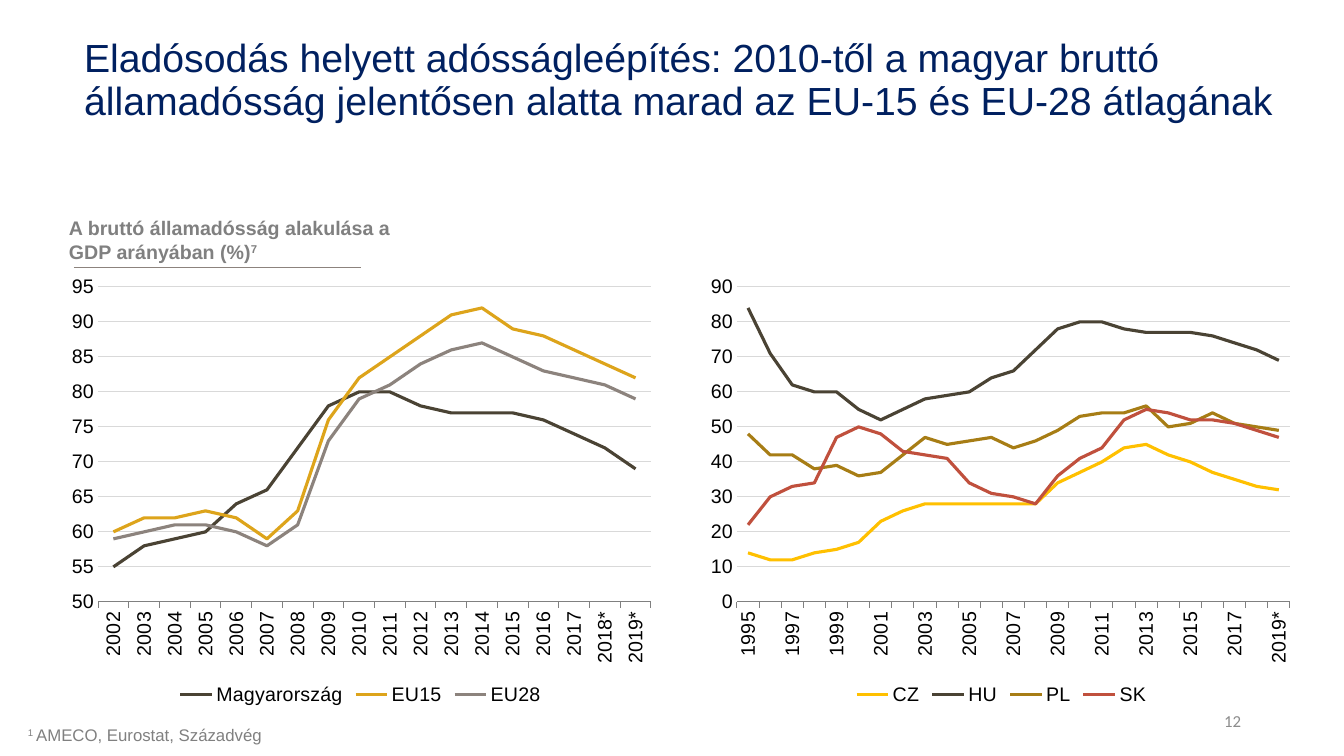
import lxml.etree
import pptx
import pptx.chart.data
import pptx.dml.color
import pptx.enum.chart
import pptx.enum.shapes
import pptx.enum.text
import pptx.oxml
import pptx.oxml.ns
import pptx.util

RGBColor = pptx.dml.color.RGBColor
Anchor = pptx.enum.text.MSO_ANCHOR
Align = pptx.enum.text.PP_ALIGN
qn = pptx.oxml.ns.qn

NAVY = RGBColor(0x00, 0x20, 0x60)
GREY = RGBColor(0x80, 0x80, 0x80)
PAGE_GREY = RGBColor(0x8C, 0x8C, 0x8C)
GRID_GREY = RGBColor(0xD9, 0xD9, 0xD9)
BLACK = RGBColor(0x00, 0x00, 0x00)
TAUPE = RGBColor(0x8C, 0x83, 0x7D)
DARK = RGBColor(0x4A, 0x43, 0x34)
AMBER = RGBColor(0xDD, 0xA4, 0x1B)
YELLOW = RGBColor(0xFF, 0xC0, 0x00)
OCHRE = RGBColor(0xA7, 0x7D, 0x15)
RED = RGBColor(0xC0, 0x50, 0x3D)

EMU_PER_PX = 914400 / 100.8
CHART_WIDTH, CHART_HEIGHT = 603, 443
PLOT_TOP, PLOT_WIDTH, PLOT_HEIGHT = 20, 553, 315


def px(length):
    return pptx.util.Emu(round(length * EMU_PER_PX))


def add_run(paragraph, text, size, color, name="Arial", bold=False, superscript=False):
    run = paragraph.add_run()
    run.text = text
    font = run.font
    font.name, font.size, font.bold = name, pptx.util.Pt(size), bold
    font.color.rgb = color
    if superscript:
        run._r.get_or_add_rPr().set("baseline", "30000")


def add_text_box(slide, left, top, width, height, anchor=Anchor.TOP):
    box = slide.shapes.add_textbox(px(left), px(top), px(width), px(height))
    box.text_frame.word_wrap = True
    box.text_frame.vertical_anchor = anchor
    return box.text_frame


def place_title(slide, left, top, width, height):
    title = slide.shapes.title
    title.left, title.top, title.width, title.height = map(px, (left, top, width, height))
    frame = title.text_frame
    frame.word_wrap = True
    frame.auto_size = pptx.enum.text.MSO_AUTO_SIZE.NONE
    frame.vertical_anchor = Anchor.TOP
    paragraph = frame.paragraphs[0]
    paragraph.alignment = Align.LEFT
    paragraph.line_spacing = 0.9
    add_run(paragraph, "Eladósodás helyett adósságleépítés: 2010-től a magyar bruttó "
            "államadósság jelentősen alatta marad az EU-15 és EU-28 átlagának", 28, NAVY)


def add_chart_heading(slide, left, top, width, height):
    """Bold heading with a thin rule below it."""
    paragraph = add_text_box(slide, left, top, width, height).paragraphs[0]
    add_run(paragraph, "A bruttó államadósság alakulása a GDP arányában (%)", 14, GREY, bold=True)
    add_run(paragraph, "7", 14, GREY, bold=True, superscript=True)
    rule_left, rule_top = left + 15, top + 56
    rule = slide.shapes.add_connector(
        pptx.enum.shapes.MSO_CONNECTOR.STRAIGHT,
        px(rule_left), px(rule_top), px(rule_left + 287), px(rule_top))
    rule.line.color.rgb = TAUPE
    rule.line.width = pptx.util.Pt(0.5)
    lxml.etree.SubElement(rule._element.spPr, qn("a:effectLst"))


def add_footnote(slide, left, top, width, height):
    frame = add_text_box(slide, left, top, width, height, Anchor.BOTTOM)
    frame.margin_left = frame.margin_top = frame.margin_right = frame.margin_bottom = 0
    paragraph = frame.paragraphs[0]
    properties = paragraph._p.get_or_add_pPr()
    properties.set("marL", str(px(68)))
    properties.set("indent", str(-px(68)))
    add_run(paragraph, "1 ", 12, GREY, superscript=True)
    add_run(paragraph, "AMECO, Eurostat, Századvég", 12, GREY)


def add_page_number(slide, left, top, width, height):
    paragraph = add_text_box(slide, left, top, width, height, Anchor.MIDDLE).paragraphs[0]
    paragraph.alignment = Align.RIGHT
    add_run(paragraph, "12", 12, PAGE_GREY, name="Calibri")


def set_plot_area(chart, plot_left):
    """Fix the inner plot area, given in px from the chart's left edge."""
    plot_area = chart._chartSpace.chart.plotArea
    for old_layout in plot_area.findall(qn("c:layout")):
        plot_area.remove(old_layout)
    layout = lxml.etree.Element(qn("c:layout"))
    manual = lxml.etree.SubElement(layout, qn("c:manualLayout"))
    settings = [("layoutTarget", "inner"), ("xMode", "edge"), ("yMode", "edge"),
                ("x", plot_left / CHART_WIDTH), ("y", PLOT_TOP / CHART_HEIGHT),
                ("w", PLOT_WIDTH / CHART_WIDTH), ("h", PLOT_HEIGHT / CHART_HEIGHT)]
    for tag, value in settings:
        lxml.etree.SubElement(manual, qn("c:" + tag)).set("val", str(value))
    plot_area.insert(0, layout)


def format_axes(chart, minimum, maximum, step, label_step):
    values = chart.value_axis
    values.minimum_scale, values.maximum_scale, values.major_unit = minimum, maximum, step
    values.major_tick_mark = pptx.enum.chart.XL_TICK_MARK.NONE
    values.format.line.fill.background()
    values.major_gridlines.format.line.color.rgb = GRID_GREY
    values.major_gridlines.format.line.width = pptx.util.Pt(0.75)
    values.tick_labels.number_format = "0"
    values.tick_labels.number_format_is_linked = False

    years = chart.category_axis
    years.major_tick_mark = pptx.enum.chart.XL_TICK_MARK.OUTSIDE
    years.tick_label_position = pptx.enum.chart.XL_TICK_LABEL_POSITION.LOW
    years.format.line.color.rgb = GREY
    years.format.line.width = pptx.util.Pt(0.75)
    years.tick_labels.font.size = pptx.util.Pt(14)
    years._element.find(qn("c:txPr")).find(qn("a:bodyPr")).set("rot", "-5400000")
    skip = lxml.etree.Element(qn("c:tickLblSkip"))
    skip.set("val", str(label_step))
    years._element.find(qn("c:noMultiLvlLbl")).addprevious(skip)


def add_debt_chart(slide, left, top, plot_left, first_year, series, scale, label_step):
    """Line chart by year; series holds (name, colour, values)."""
    data = pptx.chart.data.CategoryChartData()
    data.categories = [str(year) for year in range(first_year, 2018)] + ["2018*", "2019*"]
    for name, _, values in series:
        data.add_series(name, values)
    chart = slide.shapes.add_chart(
        pptx.enum.chart.XL_CHART_TYPE.LINE, px(left), px(top),
        px(CHART_WIDTH), px(CHART_HEIGHT), data).chart
    chart.font.name, chart.font.size = "Arial", pptx.util.Pt(14)
    chart.font.color.rgb = BLACK
    chart.has_title = False
    chart.has_legend = True
    chart.legend.position = pptx.enum.chart.XL_LEGEND_POSITION.BOTTOM
    chart.legend.include_in_layout = False
    chart.plots[0].vary_by_categories = False
    for line, (_, color, _) in zip(chart.plots[0].series, series):
        line.smooth = False
        line.marker.style = pptx.enum.chart.XL_MARKER_STYLE.NONE
        line.format.line.color.rgb = color
        line.format.line.width = pptx.util.Pt(2.25)
    format_axes(chart, *scale, label_step)
    set_plot_area(chart, plot_left)


def main():
    presentation = pptx.Presentation()
    presentation.slide_width, presentation.slide_height = px(1344), px(756)
    slide = presentation.slides.add_slide(presentation.slide_layouts[5])

    hungary = [84, 71, 62, 60, 60, 55, 52, 55, 58, 59, 60, 64, 66,
               72, 78, 80, 80, 78, 77, 77, 77, 76, 74, 72, 69]
    eu_series = [
        ("Magyarország", DARK, hungary[7:]),
        ("EU15", AMBER, [60, 62, 62, 63, 62, 59, 63, 76, 82, 85, 88, 91, 92, 89, 88, 86, 84, 82]),
        ("EU28", TAUPE, [59, 60, 61, 61, 60, 58, 61, 73, 79, 81, 84, 86, 87, 85, 83, 82, 81, 79]),
    ]
    regional_series = [
        ("CZ", YELLOW, [14, 12, 12, 14, 15, 17, 23, 26, 28, 28, 28, 28, 28,
                        28, 34, 37, 40, 44, 45, 42, 40, 37, 35, 33, 32]),
        ("HU", DARK, hungary),
        ("PL", OCHRE, [48, 42, 42, 38, 39, 36, 37, 42, 47, 45, 46, 47, 44,
                       46, 49, 53, 54, 54, 56, 50, 51, 54, 51, 50, 49]),
        ("SK", RED, [22, 30, 33, 34, 47, 50, 48, 43, 42, 41, 34, 31, 30,
                     28, 36, 41, 44, 52, 55, 54, 52, 52, 51, 49, 47]),
    ]

    place_title(slide, 74, 34, 1250, 102)
    add_page_number(slide, 949, 701, 302, 40)
    add_chart_heading(slide, 59, 211, 372, 43)
    add_footnote(slide, 28, 725, 793, 20)
    add_debt_chart(slide, 700, 267, 37, 1995, regional_series, (0, 90, 10), 2)
    add_debt_chart(slide, 59, 267, 39, 2002, eu_series, (50, 95, 5), 1)
    presentation.save("out.pptx")


if __name__ == "__main__":
    main()
